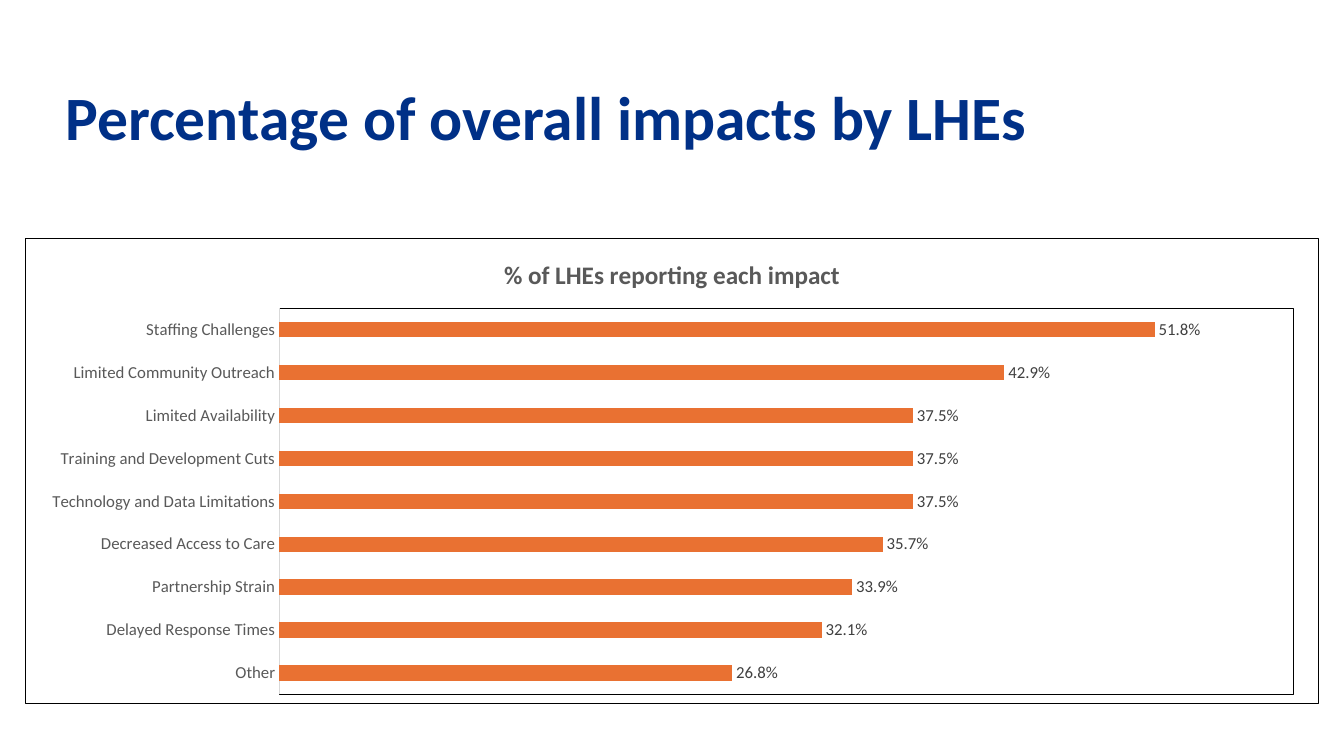
from dataclasses import dataclass

import pptx
import pptx.chart.data
import pptx.dml.color
import pptx.enum.chart
import pptx.enum.text
import pptx.oxml
import pptx.oxml.ns
import pptx.util
from pptx.util import Cm, Pt


@dataclass(frozen=True)
class Theme:
    font: str = "Calibri"
    heading: str = "003087"
    bar: str = "E97132"
    muted: str = "595959"
    label: str = "404040"
    axis: str = "D9D9D9"
    border: str = "000000"
    heading_size: int = 44
    chart_title_size: int = 18
    chart_size: int = 12
    line_width: float = 0.75


THEME = Theme()

IMPACTS = [
    ("Staffing Challenges", 0.518),
    ("Limited Community Outreach", 0.429),
    ("Limited Availability", 0.375),
    ("Training and Development Cuts", 0.375),
    ("Technology and Data Limitations", 0.375),
    ("Decreased Access to Care", 0.357),
    ("Partnership Strain", 0.339),
    ("Delayed Response Times", 0.321),
    ("Other", 0.268),
]


def rgb(color):
    return pptx.dml.color.RGBColor.from_string(color)


def style_font(font, size, color, bold=False):
    font.name = THEME.font
    font.size = Pt(size)
    font.bold = bold
    font.color.rgb = rgb(color)


def border_element():
    return pptx.oxml.parse_xml(
        f'<c:spPr {pptx.oxml.ns.nsdecls("c", "a")}><a:noFill/>'
        f'<a:ln w="{Pt(THEME.line_width)}"><a:solidFill>'
        f'<a:srgbClr val="{THEME.border}"/></a:solidFill></a:ln></c:spPr>'
    )


def frame_chart(chart, x, y, width, height):
    """Border the chart and its plot, placed in fractions of the chart."""
    chart_element = chart.element.find(pptx.oxml.ns.qn("c:chart"))
    chart_element.addnext(border_element())
    plot_area = chart_element.find(pptx.oxml.ns.qn("c:plotArea"))
    for old_layout in plot_area.findall(pptx.oxml.ns.qn("c:layout")):
        plot_area.remove(old_layout)
    plot_area.insert(0, pptx.oxml.parse_xml(
        f'<c:layout {pptx.oxml.ns.nsdecls("c")}><c:manualLayout>'
        '<c:layoutTarget val="inner"/>'
        '<c:xMode val="edge"/><c:yMode val="edge"/>'
        f'<c:x val="{x}"/><c:y val="{y}"/>'
        f'<c:w val="{width}"/><c:h val="{height}"/>'
        '</c:manualLayout></c:layout>'
    ))
    plot_area.append(border_element())


def add_heading(slide, left, top, width, height):
    text_frame = slide.shapes.add_textbox(left, top, width, height).text_frame
    text_frame.word_wrap = True
    text_frame.vertical_anchor = pptx.enum.text.MSO_ANCHOR.MIDDLE
    run = text_frame.paragraphs[0].add_run()
    run.text = "Percentage of overall impacts by LHEs"
    style_font(run.font, THEME.heading_size, THEME.heading, bold=True)


def add_impact_chart(slide, left, top, width, height):
    data = pptx.chart.data.CategoryChartData(number_format="0.0%")
    data.categories = [name for name, share in IMPACTS]
    data.add_series("Series 1", [share for name, share in IMPACTS])
    chart = slide.shapes.add_chart(
        pptx.enum.chart.XL_CHART_TYPE.BAR_CLUSTERED,
        left, top, width, height, data,
    ).chart
    style_font(chart.font, THEME.chart_size, THEME.muted)
    chart.has_legend = False

    # Chart title
    chart.has_title = True
    chart.chart_title.include_in_layout = False
    run = chart.chart_title.text_frame.paragraphs[0].add_run()
    run.text = "% of LHEs reporting each impact"
    style_font(run.font, THEME.chart_title_size, THEME.muted, bold=True)

    # Axes
    category_axis = chart.category_axis
    category_axis.reverse_order = True
    category_axis.major_tick_mark = pptx.enum.chart.XL_TICK_MARK.NONE
    category_axis.format.line.color.rgb = rgb(THEME.axis)
    category_axis.format.line.width = Pt(THEME.line_width)
    style_font(category_axis.tick_labels.font, THEME.chart_size, THEME.muted)
    value_axis = chart.value_axis
    value_axis.minimum_scale = 0
    value_axis.maximum_scale = 0.6
    value_axis.has_major_gridlines = False
    value_axis.visible = False

    # Bars and their labels
    plot = chart.plots[0]
    plot.gap_width = 182
    plot.vary_by_categories = False
    series = plot.series[0]
    series.format.fill.solid()
    series.format.fill.fore_color.rgb = rgb(THEME.bar)
    labels = series.data_labels
    labels.show_value = True
    labels.number_format = "0.0%"
    labels.number_format_is_linked = False
    labels.position = pptx.enum.chart.XL_LABEL_POSITION.OUTSIDE_END
    style_font(labels.font, THEME.chart_size, THEME.label)

    frame_chart(chart, 0.196, 0.15, 0.785, 0.83)


def main():
    presentation = pptx.Presentation()
    presentation.slide_width = Cm(33.87)
    presentation.slide_height = Cm(19.05)
    slide = presentation.slides.add_slide(presentation.slide_layouts[6])
    add_heading(slide, Cm(1.4), Cm(1.52), Cm(30.63), Cm(2.8))
    add_impact_chart(slide, Cm(0.64), Cm(5.99), Cm(32.59), Cm(11.76))
    presentation.save("out.pptx")


if __name__ == "__main__":
    main()
